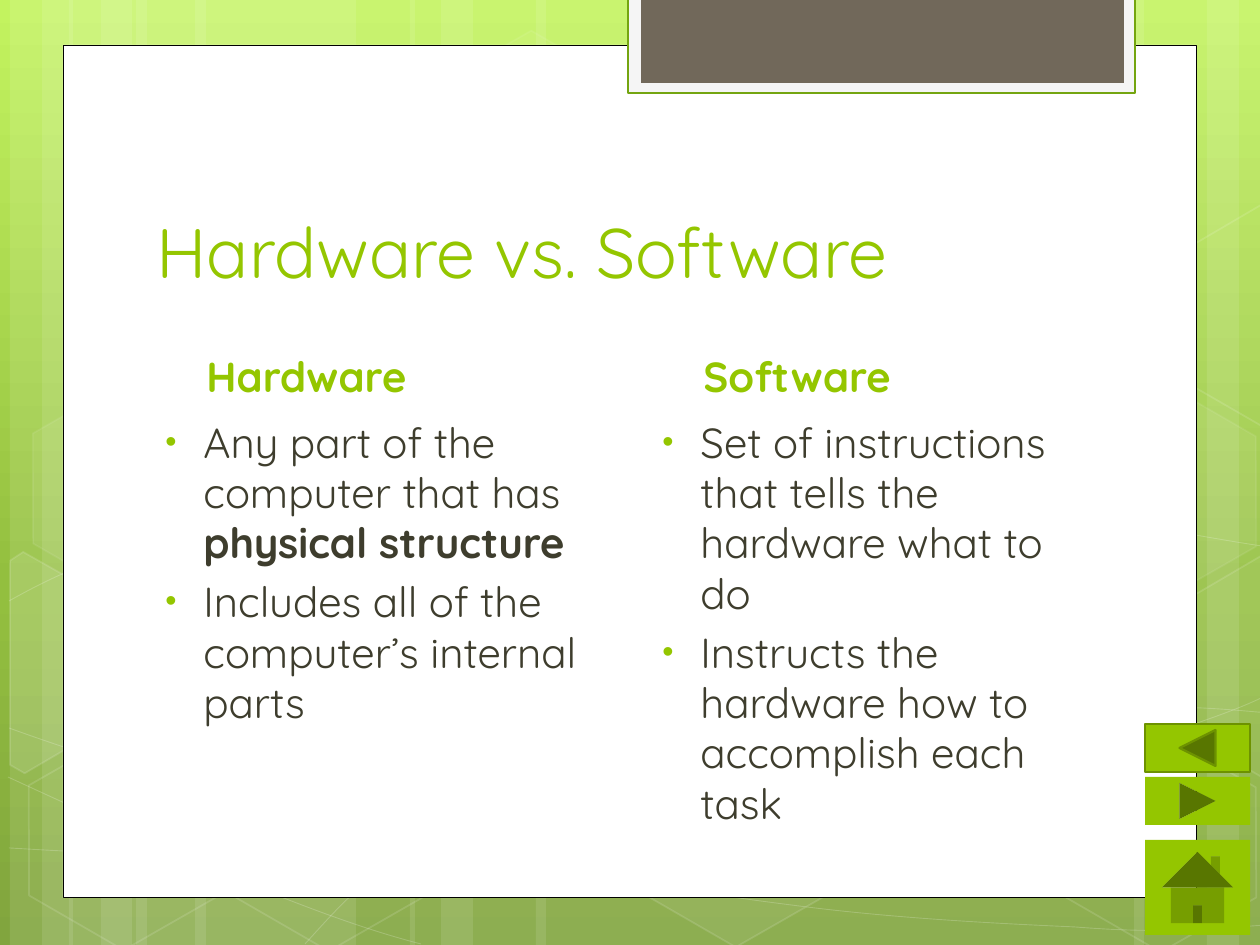
"""Build the Hardware vs. Software comparison slide."""
import pptx
import pptx.dml.color
import pptx.enum.shapes
import pptx.enum.text
import pptx.oxml
import pptx.oxml.ns
import pptx.util
import copy
import lxml.etree

PX = 914400 / 126
FONT = "Quicksand"
WHITE, GREEN, DARK = "FFFFFF", "94C600", "3E3D2D"
SHAPE = pptx.enum.shapes.MSO_SHAPE
ANCHOR = pptx.enum.text.MSO_ANCHOR


def paint(shape, fill=None, line=None, width=1, fill_alpha=100, line_alpha=100):
    shape.shadow.inherit = False
    for target, colour in ((shape.fill, fill), (shape.line.fill, line)):
        if colour:
            target.solid()
            target.fore_color.rgb = pptx.dml.color.RGBColor.from_string(colour)
        else:
            target.background()
    if line:
        shape.line.width = pptx.util.Pt(width)
    for query, alpha in (("a:solidFill/a:srgbClr", fill_alpha),
                         ("a:ln/a:solidFill/a:srgbClr", line_alpha)):
        for node in shape.element.spPr.xpath(query):
            if alpha < 100:
                tag = pptx.oxml.ns.qn("a:alpha")
                lxml.etree.SubElement(node, tag).set("val", str(alpha * 1000))


def write(box, bounds, paragraphs, size, colour, bold=False, anchor=ANCHOR.TOP):
    box.left, box.top, box.width, box.height = [round(v * PX) for v in bounds]
    frame = box.text_frame
    frame.word_wrap = True
    frame.auto_size = pptx.enum.text.MSO_AUTO_SIZE.NONE
    frame.vertical_anchor = anchor
    frame.text = "\n".join("".join(spans) for spans in paragraphs)
    for para, spans in zip(frame.paragraphs, paragraphs):
        para.alignment = pptx.enum.text.PP_ALIGN.LEFT
        para.text = spans[0]
        for words in spans[1:]:
            para.add_run().text = words
        for index, span in enumerate(para.runs):
            span.font.name = FONT
            span.font.size = pptx.util.Pt(size)
            span.font.bold = bold or index > 0
            span.font.color.rgb = pptx.dml.color.RGBColor.from_string(colour)


deck = pptx.Presentation()
deck.slide_width, deck.slide_height = round(1260 * PX), round(945 * PX)
page = deck.slides.add_slide(deck.slide_layouts[5])
shapes = page.shapes

backdrop = page.background.fill
backdrop.gradient()
backdrop.gradient_angle = 270
stop_list = page.element.xpath(".//p:bg//a:gsLst")[0]
stop_list.append(copy.deepcopy(stop_list[-1]))
stops = ((0, "C3F35F"), (0.62, "93BF3F"), (1, "81A53E"))
for stop, (position, colour) in zip(backdrop.gradient_stops, stops):
    stop.position = position
    stop.color.rgb = pptx.dml.color.RGBColor.from_string(colour)

bands = [(136, 220), (10, 63), (42, 105), (195, 220), (69, 63), (101, 105),
         (924, 220), (1207, 63), (1134, 105), (536, 388), (410, 63), (441, 105)]
for left, width in bands:
    band = shapes.add_shape(SHAPE.RECTANGLE, *[round(v * PX) for v in (left, 0, width, 945)])
    paint(band, WHITE, fill_alpha=10)

curves = [
    [(9, 848), (77, 852), (145, 856), (239, 854), (334, 853), (451, 851), (577, 838),
     (703, 825), (882, 801), (998, 777), (1113, 753), (1231, 715), (1269, 694)],
    [(9, 601), (45, 581), (82, 562), (152, 543), (224, 522), (326, 496), (437, 488),
     (549, 479), (685, 478), (824, 488), (963, 488), (1193, 537), (1269, 547)],
    [(8, 777), (160, 847), (311, 916), (421, 944)],
    [(9, 728), (48, 742), (88, 756), (161, 776), (234, 795), (344, 827), (450, 848),
     (554, 869), (687, 892), (791, 905), (896, 919), (1008, 924), (1075, 927),
     (1140, 932), (1158, 930), (1191, 930), (1223, 929), (1246, 926), (1269, 925)],
    [(305, 944), (328, 919), (350, 893), (381, 871), (411, 848), (454, 823), (489, 805),
     (524, 787), (546, 780), (592, 767), (638, 754), (722, 737), (766, 728),
     (811, 719), (818, 719), (857, 717), (896, 713), (958, 709), (1000, 708),
     (1045, 707), (1116, 708), (1116, 708), (1144, 708), (1173, 708), (1201, 708),
     (1223, 709), (1245, 711), (1256, 712), (1268, 713), (1264, 712), (1268, 713)],
]
for knots in curves:
    builder = shapes.build_freeform(*knots[0], scale=PX)
    builder.add_line_segments(knots[1:], close=False)
    curve = builder.convert_to_shape()
    segments = curve.element.xpath(".//a:lnTo")
    for start in range(0, len(segments), 3):
        bend = lxml.etree.SubElement(segments[start].getparent(), pptx.oxml.ns.qn("a:cubicBezTo"))
        for segment in segments[start:start + 3]:
            bend.append(segment[0])
            segment.getparent().remove(segment)
    paint(curve, line=WHITE, width=0.5, line_alpha=20)

hexagons = [(421, 45, 4, 8), (626, 742, 6, 12), (14, 745, 0, 12), (18, 393, 7, 8),
            (219, 746, 0, 12), (949, 571, 10, 12), (1051, 747, 0, 12), (1051, 396, 7, 8)]
for left, top, fill_alpha, line_alpha in hexagons:
    cell = shapes.add_shape(SHAPE.HEXAGON, *[round(v * PX) for v in (left, top, 220, 191)])
    cell.adjustments[0], cell.adjustments[1] = 0.29, 1.15
    cell.rotation = 30
    paint(cell, WHITE if fill_alpha else None, WHITE, 1, fill_alpha, line_alpha)

left_cut = [(-87, -81), (-80, -95), (32, -96), (86, 1), (32, 96), (15, 96)]
right_cut = [(-86, -1), (-32, -96), (-20, -96), (85, 86), (80, 95), (-31, 95)]
cut_cells = [(45, 674, left_cut, 10), (1241, 655, right_cut, 4), (1241, 304, right_cut, 0)]
for centre_x, centre_y, outline, fill_alpha in cut_cells:
    corners = [(centre_x + x, centre_y + y) for x, y in outline]
    builder = shapes.build_freeform(*corners[0], scale=PX)
    builder.add_line_segments(corners[1:], close=True)
    cell = builder.convert_to_shape()
    cell.rotation = 30
    paint(cell, WHITE if fill_alpha else None, WHITE, 1, fill_alpha, 12)

panels = [((63, 45, 1134, 853), WHITE, "000000", 0.5),
          ((628, -2, 507, 95), "F5F5F5", "74A510", 1.25),
          ((641, -2, 483, 85), "71685A", None, 0)]
for bounds, fill, line, width in panels:
    panel = shapes.add_shape(SHAPE.RECTANGLE, *[round(v * PX) for v in bounds])
    paint(panel, fill, line, width)

title = shapes.title
shapes.element.append(title.element)
write(title, (144, 141, 968, 158), [["Hardware vs. Software"]], 40, GREEN, anchor=ANCHOR.BOTTOM)

columns = [
    (143, "Hardware", [["Any part of the computer that has ", "physical structure"],
                       ["Includes all of the computer’s internal parts"]]),
    (640, "Software", [["Set of instructions that tells the hardware what to do"],
                       ["Instructs the hardware how to accomplish each task"]]),
]
namespace = pptx.oxml.ns.nsdecls("a")
bullet = (f'<a:buClr {namespace}><a:srgbClr val="{GREEN}"/></a:buClr>',
          f'<a:buSzPct {namespace} val="76000"/>',
          f'<a:buFont {namespace} typeface="Arial"/>',
          f'<a:buChar {namespace} char="•"/>')
for left, heading, points in columns:
    box = shapes.add_textbox(0, 0, 0, 0)
    write(box, (left + 51, 319, 421, 88), [[heading]], 24, GREEN, True, ANCHOR.BOTTOM)
    box = shapes.add_textbox(0, 0, 0, 0)
    write(box, (left, 410, 471, 391), points, 24, DARK)
    for para in box.text_frame.paragraphs:
        para.space_before = pptx.util.Pt(4.8)
    for properties in box.element.xpath(".//a:pPr"):
        properties.set("marL", str(round(48 * PX)))
        properties.set("indent", str(round(-38 * PX)))
        for markup in bullet:
            properties.append(pptx.oxml.parse_xml(markup))

buttons = [(SHAPE.ACTION_BUTTON_HOME, 840, 95, None),
           (SHAPE.ACTION_BUTTON_FORWARD_OR_NEXT, 777, 48, None),
           (SHAPE.ACTION_BUTTON_BACK_OR_PREVIOUS, 724, 48, "6D9200")]
for kind, top, height, line in buttons:
    button = shapes.add_shape(kind, *[round(v * PX) for v in (1145, top, 105, height)])
    paint(button, GREEN, line, 1.25)

deck.save("out.pptx")
